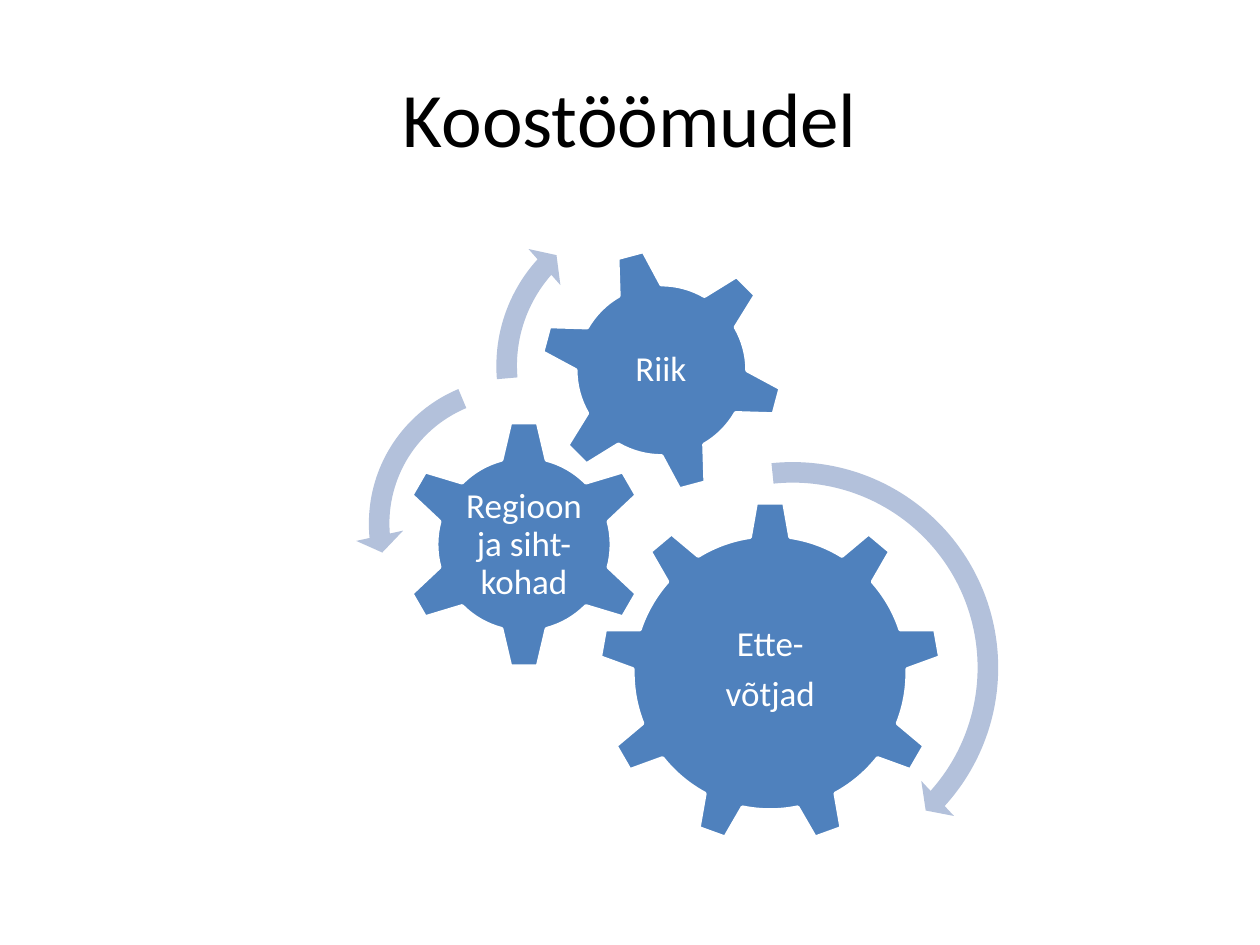
from pptx import Presentation
from pptx.dml.color import RGBColor as Rgb
from pptx.enum.shapes import MSO_SHAPE as Shape
from pptx.enum.text import MSO_ANCHOR as Anchor, PP_ALIGN as Align
from pptx.util import Cm, Pt

THEME = {
    "font": "Calibri",
    "title": {"size": Pt(44), "color": Rgb(0, 0, 0)},
    "label": {"size": Pt(20), "color": Rgb(255, 255, 255)},
    "gear": Rgb(0x4F, 0x81, 0xBD),
    "gear_line": Rgb(255, 255, 255),
    "arrow": Rgb(0xB3, 0xC1, 0xDB),
}
TITLE = "Koostöömudel"
TITLE_AREA = (1.27, 0.76, 22.86, 3.18)
GEARS = [
    {"kind": Shape.GEAR_9, "area": (12.07, 10.11, 6.91, 6.91), "turn": 0,
     "label": ["Ette-", "võtjad"], "label_area": (13.46, 11.73, 4.14, 3.56)},
    {"kind": Shape.GEAR_6, "area": (8.05, 8.46, 5.03, 5.03), "turn": 0,
     "label": ["Regioon ja siht-kohad"], "label_area": (9.32, 9.75, 2.49, 2.49)},
    {"kind": Shape.GEAR_6, "area": (10.87, 5, 4.93, 4.93), "turn": 345,
     "label": ["Riik"], "label_area": (11.94, 6.07, 2.77, 2.77)},
]
ARROWS = [
    {"kind": Shape.CIRCULAR_ARROW, "area": (11.56, 9.04, 8.84, 8.84),
     "band": 4.69, "angles": (4.98, 42.06, 264.09), "head": 5.47},
    {"kind": Shape.LEFT_CIRCULAR_ARROW, "area": (7.16, 7.34, 6.43, 6.43),
     "band": 6.45, "angles": (7.17, 174.82, 247.3), "head": 7.53},
    {"kind": Shape.CIRCULAR_ARROW, "area": (9.73, 3.91, 6.93, 6.93),
     "band": 6, "angles": (6.57, 221.9, 175.14), "head": 7},
]
DEGREE = 0.6
FRAME = {"word_wrap": True, "vertical_anchor": Anchor.MIDDLE}
INSETS = {f"margin_{side}": Cm(0.07) for side in ("left", "top", "right", "bottom")}
LABEL_PARA = {"alignment": Align.CENTER, "line_spacing": 0.9, "space_after": Pt(7)}


def apply(target, values):
    for name, value in values.items():
        setattr(target, name, value)


def lengths(area):
    return [Cm(value) for value in area]


def write(frame, lines, style, para_format):
    for index, line in enumerate(lines):
        para = frame.add_paragraph() if index else frame.paragraphs[0]
        apply(para, para_format)
        span = para.add_run()
        span.text = line
        apply(span.font, {"name": THEME["font"], "size": style["size"]})
        span.font.color.rgb = style["color"]


def add_filled(shapes, item, color):
    shape = shapes.add_shape(item["kind"], *lengths(item["area"]))
    shape.shadow.inherit = False
    shape.fill.solid()
    shape.fill.fore_color.rgb = color
    return shape


def add_gear(shapes, item):
    gear = add_filled(shapes, item, THEME["gear"])
    gear.rotation = item["turn"]
    gear.line.color.rgb = THEME["gear_line"]
    gear.line.width = Pt(2)
    box = shapes.add_textbox(*lengths(item["label_area"]))
    apply(box.text_frame, {**FRAME, **INSETS})
    write(box.text_frame, item["label"], THEME["label"], LABEL_PARA)


def add_arrow(shapes, item):
    arrow = add_filled(shapes, item, THEME["arrow"])
    arrow.line.fill.background()
    turns = [angle * DEGREE for angle in item["angles"]]
    for index, value in enumerate([item["band"] / 100, *turns, item["head"] / 100]):
        arrow.adjustments[index] = value


def main():
    deck = Presentation()
    deck.slide_width, deck.slide_height = Cm(25.4), Cm(19.05)
    page = deck.slides.add_slide(deck.slide_layouts[5])
    title = page.shapes.title
    apply(title, dict(zip(("left", "top", "width", "height"), lengths(TITLE_AREA))))
    apply(title.text_frame, FRAME)
    write(title.text_frame, [TITLE], THEME["title"], {"alignment": Align.CENTER})
    diagram = page.shapes.add_group_shape().shapes
    for item in GEARS:
        add_gear(diagram, item)
    for item in ARROWS:
        add_arrow(diagram, item)
    deck.save("out.pptx")


if __name__ == "__main__":
    main()
